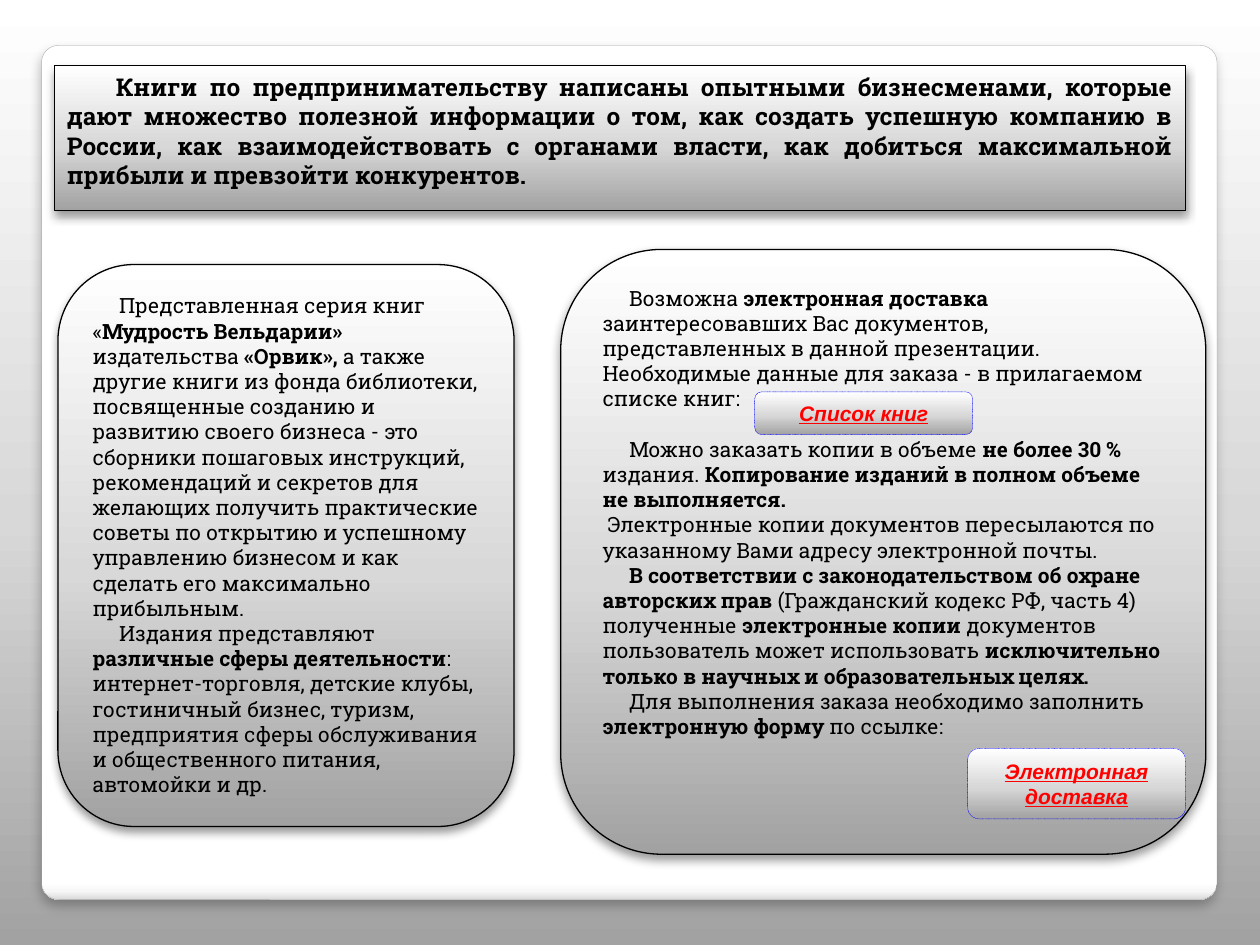
import dataclasses

import pptx
import pptx.dml.color
import pptx.enum.dml
import pptx.enum.shapes
import pptx.enum.text
import pptx.oxml
import pptx.oxml.ns
import pptx.util

Inches = pptx.util.Inches
Pt = pptx.util.Pt
Align = pptx.enum.text.PP_ALIGN
qn = pptx.oxml.ns.qn
NS = pptx.oxml.ns.nsdecls("a")


@dataclasses.dataclass(frozen=True)
class Theme:
    silver: tuple = ((0, "A2A2A2"), (45, "D8D8D8"), (100, "FFFFFF"))
    paper: tuple = ((0, "FFFFFF"), (98, "FFFFFF"), (99, "F7F7F7"), (100, "DADADA"))
    ink: str = "000000"
    frame_line: str = "A4A4A4"
    button_line: str = "0000FF"
    button_text: str = "FF0000"
    text_font: str = "Roboto Slab"
    button_font: str = "Arial"
    heading_size: float = 14
    body_size: float = 12
    blank_line: float = 14.4


THEME = Theme()

HEADING = (
    "Книги по предпринимательству написаны опытными бизнесменами, которые дают "
    "множество полезной информации о том, как создать успешную компанию в России, "
    "как взаимодействовать с органами власти, как добиться максимальной прибыли "
    "и превзойти конкурентов."
)

# Each paragraph: text with **bold** parts, first-line indent in inches, space before in points
SERIES = [
    ("Представленная серия книг «**Мудрость Вельдарии» **издательства **«Орвик», **"
     "а также другие книги из фонда библиотеки, посвященные созданию и развитию "
     "своего бизнеса - это сборники пошаговых инструкций, рекомендаций и секретов "
     "для желающих получить практические советы по открытию и успешному управлению "
     "бизнесом и как сделать его максимально прибыльным.", 0.21, 0),
    ("Издания представляют **различные сферы деятельности**: интернет-торговля, "
     "детские клубы, гостиничный бизнес, туризм, предприятия сферы обслуживания "
     "и общественного питания, автомойки и др.", 0.21, 0),
]
DELIVERY = [
    ("Возможна **электронная доставка **заинтересовавших Вас документов, "
     "представленных в данной презентации. Необходимые данные для заказа - "
     "в прилагаемом списке книг:", 0.21, 0),
    ("Можно заказать копии в объеме **не более 30 % **издания. "
     "**Копирование изданий в полном объеме не выполняется.**", 0.21, THEME.blank_line),
    ("Электронные копии документов пересылаются по указанному Вами адресу "
     "электронной почты.", 0.04, 0),
    ("**В соответствии с законодательством об охране авторских прав **"
     "(Гражданский кодекс РФ, часть 4) полученные **электронные копии **документов "
     "пользователь может использовать **исключительно только в научных "
     "и образовательных целях.**", 0.21, 0),
    ("Для выполнения заказа необходимо заполнить **электронную форму **по ссылке:",
     0.21, 0),
]


def rgb(value):
    return pptx.dml.color.RGBColor.from_string(value)


def set_gradient(fill, owner, stops, angle):
    """Fill with colour stops; the angle runs counter-clockwise."""
    fill.gradient()
    fill.gradient_angle = angle
    stop_list = next(owner.iter(qn("a:gsLst")))
    for stop in list(stop_list):
        stop_list.remove(stop)
    for position, color in stops:
        stop_list.append(pptx.oxml.parse_xml(
            f'<a:gs {NS} pos="{position * 1000}"><a:srgbClr val="{color}"/></a:gs>'))


def add_shadow(shape, opacity, blur, distance):
    effects = next(shape.element.spPr.iter(qn("a:effectLst")))
    effects.append(pptx.oxml.parse_xml(
        f'<a:outerShdw {NS} blurRad="{Pt(blur)}" dist="{Pt(distance)}" dir="5400000" '
        f'algn="ctr" rotWithShape="0"><a:srgbClr val="{THEME.ink}">'
        f'<a:alpha val="{opacity * 1000}"/></a:srgbClr></a:outerShdw>'))


def style_box(shape, line_color, line_width, stops=THEME.silver, angle=90):
    shape.shadow.inherit = False
    set_gradient(shape.fill, shape.element.spPr, stops, angle)
    shape.line.color.rgb = rgb(line_color)
    shape.line.width = Pt(line_width)
    frame = shape.text_frame
    frame.word_wrap = True
    frame.auto_size = pptx.enum.text.MSO_AUTO_SIZE.NONE
    frame.vertical_anchor = pptx.enum.text.MSO_ANCHOR.TOP


def add_rounded(slide, left, top, width, height):
    return slide.shapes.add_shape(
        pptx.enum.shapes.MSO_SHAPE.ROUNDED_RECTANGLE,
        Inches(left), Inches(top), Inches(width), Inches(height))


def write_paragraph(paragraph, text, size, font=THEME.text_font, color=THEME.ink,
                    align=Align.LEFT, indent=0, before=0):
    """Write text, where ** switches bold on and off."""
    paragraph.alignment = align
    paragraph.space_before = Pt(before)
    properties = paragraph._p.get_or_add_pPr()
    properties.set("marL", "0")
    properties.set("indent", str(Inches(indent)))
    paragraph.font.name = font
    paragraph.font.size = Pt(size)
    paragraph.font.color.rgb = rgb(color)
    for number, part in enumerate(text.split("**")):
        if part:
            run = paragraph.add_run()
            run.text = part
            if number % 2:
                run.font.bold = True


def add_page_frame(slide):
    frame = add_rounded(slide, 0.33, 0.36, 9.33, 6.78)
    frame.adjustments[0] = 0.02
    style_box(frame, THEME.frame_line, 0.16, THEME.paper, 270)
    add_shadow(frame, 25, 6, 4)


def place_heading(slide):
    heading = slide.shapes.title
    slide.shapes.element.append(heading.element)  # in front of the page frame
    heading.left, heading.top = Inches(0.43), Inches(0.52)
    heading.width, heading.height = Inches(8.98), Inches(1.15)
    heading.element.spPr.append(pptx.oxml.parse_xml(
        f'<a:prstGeom {NS} prst="roundRect"><a:avLst/></a:prstGeom>'))
    style_box(heading, THEME.ink, 0.75)
    add_shadow(heading, 40, 5.2, 3)
    paragraph = heading.text_frame.paragraphs[0]
    write_paragraph(paragraph, HEADING, THEME.heading_size,
                    align=Align.JUSTIFY, indent=0.39)
    paragraph.font.bold = True


def add_panel(slide, place, paragraphs):
    panel = add_rounded(slide, *place)
    style_box(panel, THEME.ink, 0.75)
    add_shadow(panel, 40, 5.2, 3)
    frame = panel.text_frame
    for number, (text, indent, before) in enumerate(paragraphs):
        paragraph = frame.add_paragraph() if number else frame.paragraphs[0]
        write_paragraph(paragraph, text, THEME.body_size, indent=indent, before=before)


def add_button(slide, place, label):
    button = add_rounded(slide, *place)
    style_box(button, THEME.button_line, 0.25)
    button.line.dash_style = pptx.enum.dml.MSO_LINE.ROUND_DOT
    paragraph = button.text_frame.paragraphs[0]
    write_paragraph(paragraph, label, THEME.body_size, THEME.button_font,
                    THEME.button_text, Align.CENTER)
    paragraph.font.bold = paragraph.font.italic = paragraph.font.underline = True


def main():
    deck = pptx.Presentation()
    deck.slide_width, deck.slide_height = Inches(10), Inches(7.5)
    slide = deck.slides.add_slide(deck.slide_layouts.get_by_name("Title Only"))

    # Background, page frame and heading
    set_gradient(slide.background.fill, slide.element, THEME.silver, 90)
    add_page_frame(slide)
    place_heading(slide)

    # Text panels
    add_panel(slide, (0.46, 2.1, 3.62, 4.46), SERIES)
    add_panel(slide, (4.45, 1.98, 5.12, 4.8), DELIVERY)

    # Buttons
    add_button(slide, (5.99, 3.11, 1.73, 0.34), "Список книг")
    add_button(slide, (7.68, 5.94, 1.73, 0.56), "Электронная доставка")

    deck.save("out.pptx")


if __name__ == "__main__":
    main()
